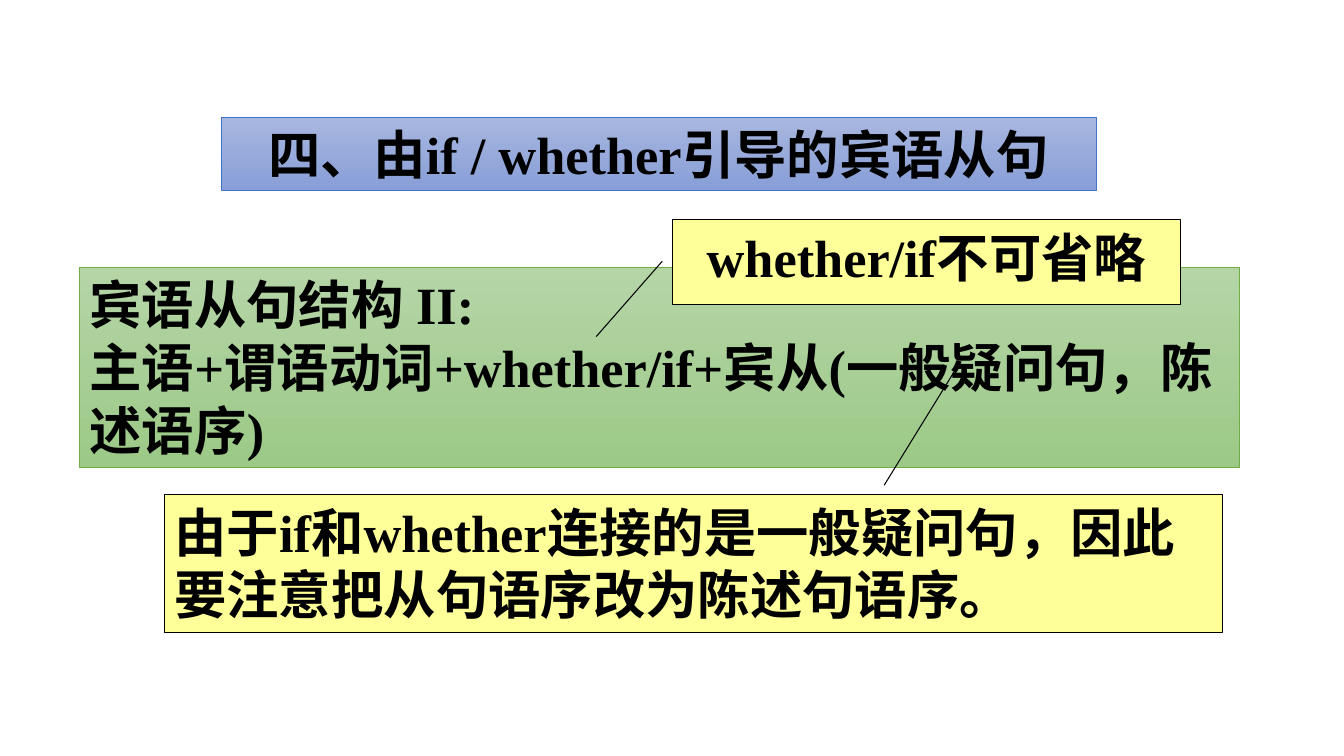
"""Build a grammar slide on object clauses introduced by if / whether."""
from pptx import Presentation
from pptx import util as u
from pptx.dml import color
from pptx.enum import shapes, text

BLACK, YELLOW = "000000", "FFFF99"
LEFT, CENTER = text.PP_ALIGN.LEFT, text.PP_ALIGN.CENTER
FRAME = {"word_wrap": True, "vertical_anchor": text.MSO_ANCHOR.TOP}
FONT = {"name": "Times New Roman", "size": u.Pt(37.4), "bold": True}


def rgb(value):
    """Turn a hex string into a colour."""
    return color.RGBColor.from_string(value)


def assign(target, values):
    """Set every attribute in a dict of format values."""
    for name, value in values.items():
        setattr(target, name, value)


def add_box(page, kind, place, outline, width, lines, align):
    """Add an outlined shape holding bold paragraphs."""
    box = page.shapes.add_shape(kind, *map(u.Inches, place))
    box.shadow.inherit = False
    box.line.color.rgb = rgb(outline)
    box.line.width = u.Pt(width)
    frame = box.text_frame
    assign(frame, FRAME)
    for index, line in enumerate(lines):
        para = frame.add_paragraph() if index else frame.paragraphs[0]
        para.alignment = align
        span = para.add_run()
        span.text = line
        assign(span.font, FONT)
        span.font.color.rgb = rgb(BLACK)
    return box


def add_panel(page, place, gradient, outline, lines, align=LEFT):
    """Add a rectangle shaded from top to bottom."""
    panel = add_box(page, shapes.MSO_SHAPE.RECTANGLE, place, outline, 0.5, lines, align)
    panel.text_frame.auto_size = text.MSO_AUTO_SIZE.SHAPE_TO_FIT_TEXT
    panel.fill.gradient()
    panel.fill.gradient_angle = 270
    for stop, value in zip(panel.fill.gradient_stops, gradient):
        stop.color.rgb = rgb(value)


def add_callout(page, place, pointer, line, align=LEFT):
    """Add a yellow callout whose pointer is given as y, x, y, x fractions."""
    callout = add_box(page, shapes.MSO_SHAPE.LINE_CALLOUT_1, place, BLACK, 0.75, [line], align)
    callout.fill.solid()
    callout.fill.fore_color.rgb = rgb(YELLOW)
    for index, value in enumerate(pointer):
        callout.adjustments[index] = value


def main():
    """Build and save the slide."""
    deck = Presentation()
    assign(deck, {"slide_width": u.Inches(13.33), "slide_height": u.Inches(7.5)})
    page = deck.slides.add_slide(deck.slide_layouts[6])
    add_panel(page, (2.2, 1.16, 8.67, 0.73), ("A8B7DF", "889ED7"), "4472C4",
              ["四、由if / whether引导的宾语从句"], CENTER)
    add_panel(page, (0.79, 2.65, 11.5, 1.99), ("B5D5A7", "9CC987"), "70AD47",
              ["宾语从句结构 II:", "主语+谓语动词+whether/if+宾从(一般疑问句，陈述语序)"])
    add_callout(page, (6.67, 2.18, 5.04, 0.84), (0.49, -0.02, 1.38, -0.15),
                "whether/if不可省略", CENTER)
    add_callout(page, (1.63, 4.91, 10.5, 1.37), (-0.07, 0.68, -0.94, 0.75),
                "由于if和whether连接的是一般疑问句，因此要注意把从句语序改为陈述句语序。")
    deck.save("out.pptx")


if __name__ == "__main__":
    main()
